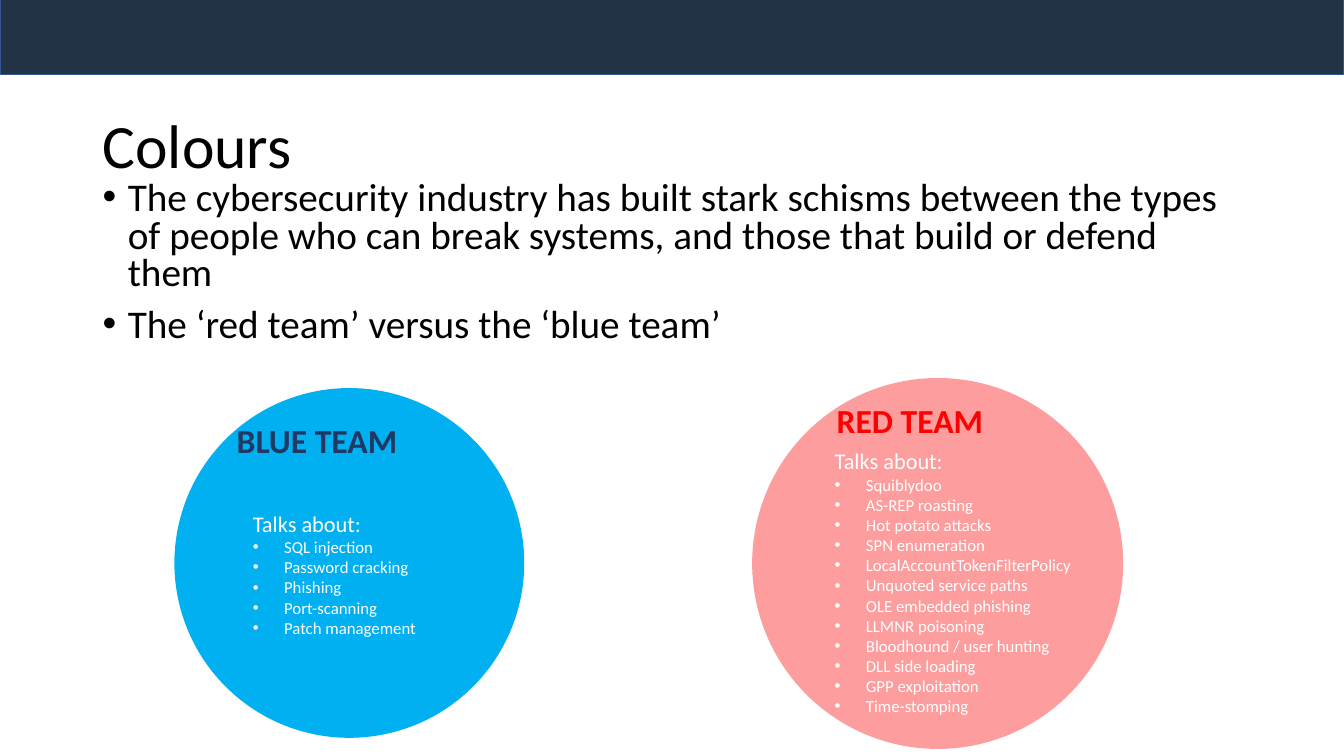
from lxml import etree
from pptx import Presentation
from pptx.dml.color import RGBColor
from pptx.enum.shapes import MSO_SHAPE
from pptx.enum.text import MSO_ANCHOR, MSO_AUTO_SIZE
from pptx.oxml.ns import qn
from pptx.util import Inches, Pt

RECTANGLE, OVAL = MSO_SHAPE.RECTANGLE, MSO_SHAPE.OVAL
TOP, MIDDLE = MSO_ANCHOR.TOP, MSO_ANCHOR.MIDDLE
FIT_SHAPE, NO_FIT = MSO_AUTO_SIZE.SHAPE_TO_FIT_TEXT, MSO_AUTO_SIZE.NONE

TITLE = "Colours"
POINTS = [
    "The cybersecurity industry has built stark schisms between the types of people "
    "who can break systems, and those that build or defend them",
    "The ‘red team’ versus the ‘blue team’",
]
TALK_HEADING = "Talks about:"
TEAMS = [
    {
        "name": "BLUE TEAM", "fill": "sky", "ink": "navy",
        "circle": (1.73, 3.85, 3.47, 3.47),
        "name_at": (2.25, 4.12, 2.44, 0.5),
        "talks_at": (2.41, 5.01, 1.84, 1.38),
        "talks": ["SQL injection", "Password cracking", "Phishing", "Port-scanning",
                  "Patch management"],
    },
    {
        "name": "RED TEAM", "fill": "pink", "ink": "red",
        "circle": (7.46, 3.75, 3.68, 3.68),
        "name_at": (8.2, 3.92, 2.27, 0.5),
        "talks_at": (8.18, 4.39, 2.58, 2.79),
        "talks": ["Squiblydoo", "AS-REP roasting", "Hot potato attacks", "SPN enumeration",
                  "LocalAccountTokenFilterPolicy", "Unquoted service paths",
                  "OLE embedded phishing", "LLMNR poisoning", "Bloodhound / user hunting",
                  "DLL side loading", "GPP exploitation", "Time-stomping"],
    },
]

SLIDE_WIDTH, SLIDE_HEIGHT = 13.33, 7.5
BANNER_AT = (0, -0.04, SLIDE_WIDTH, 0.78)
TITLE_AT = (0.92, 0.75, 11.5, 1.45)
POINTS_AT = (0.92, 1.75, 11.5, 1.82)
THEME = {
    "font": "Calibri",
    "colours": {"banner": "223346", "edge": "325491", "black": "000000", "white": "FFFFFF",
                "sky": "00B0F0", "navy": "203864", "pink": "FD9D9D", "red": "FF0000"},
    "sizes": {"title": 44, "point": 28, "team": 24, "heading": 16, "talk": 12},
}


def colour(name):
    return RGBColor.from_string(THEME["colours"][name])


def add_filled(shapes, kind, at, fill, edge=None):
    shape = shapes.add_shape(kind, *map(Inches, at))
    shape.shadow.inherit = False
    shape.fill.solid()
    shape.fill.fore_color.rgb = colour(fill)
    if edge:
        shape.line.color.rgb = colour(edge)
        shape.line.width = Pt(1)
    else:
        shape.line.fill.background()


def add_bullet(para, indent):
    properties = para._p.get_or_add_pPr()
    properties.set("marL", str(Inches(indent)))
    properties.set("indent", str(-Inches(indent)))
    etree.SubElement(properties, qn("a:buFont")).set("typeface", "Arial")
    etree.SubElement(properties, qn("a:buChar")).set("char", "•")


def add_text(shapes, at, lines, ink, wrap=False, anchor=TOP, spacing=None, gap=0):
    """Add a text box; each line is (text, size name, bold, bullet indent or None)."""
    frame = shapes.add_textbox(*map(Inches, at)).text_frame
    frame_format = {"word_wrap": wrap, "vertical_anchor": anchor,
                    "auto_size": NO_FIT if wrap else FIT_SHAPE}
    for name, value in frame_format.items():
        setattr(frame, name, value)
    for index, (text, size, bold, indent) in enumerate(lines):
        para = frame.add_paragraph() if index else frame.paragraphs[0]
        if indent:
            add_bullet(para, indent)
        if spacing:
            para.line_spacing = spacing
        if index and gap:
            para.space_before = Pt(gap)
        span = para.add_run()
        span.text = text
        font_format = {"name": THEME["font"], "size": Pt(THEME["sizes"][size]), "bold": bold}
        for name, value in font_format.items():
            setattr(span.font, name, value)
        span.font.color.rgb = colour(ink)


def add_team(page, team):
    shapes = page.shapes.add_group_shape().shapes
    add_filled(shapes, OVAL, team["circle"], team["fill"])
    add_text(shapes, team["name_at"], [(team["name"], "team", True, None)], team["ink"])
    talks = [(talk, "talk", False, 0.31) for talk in team["talks"]]
    add_text(shapes, team["talks_at"], [(TALK_HEADING, "heading", False, None)] + talks, "white")


def main():
    deck = Presentation()
    deck.slide_width, deck.slide_height = Inches(SLIDE_WIDTH), Inches(SLIDE_HEIGHT)
    page = deck.slides.add_slide(deck.slide_layouts[6])
    add_filled(page.shapes, RECTANGLE, BANNER_AT, "banner", "edge")
    add_text(page.shapes, TITLE_AT, [(TITLE, "title", False, None)], "black",
             wrap=True, anchor=MIDDLE, spacing=0.9)
    add_text(page.shapes, POINTS_AT, [(point, "point", False, 0.25) for point in POINTS],
             "black", wrap=True, spacing=0.8, gap=10)
    for team in TEAMS:
        add_team(page, team)
    deck.save("out.pptx")


if __name__ == "__main__":
    main()
